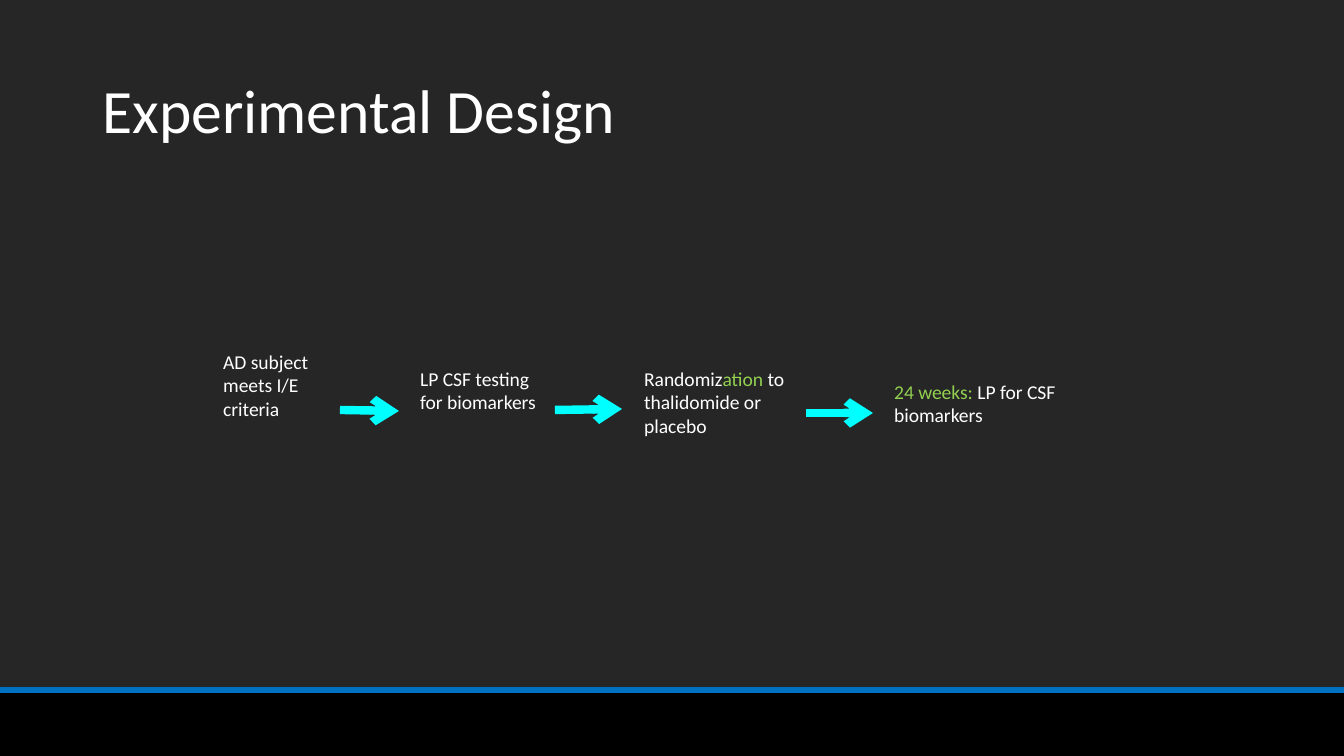
"""Build the Experimental Design slide: four study steps joined by arrows."""
from dataclasses import dataclass

from lxml import etree
from pptx import Presentation, util as u
from pptx.dml.color import RGBColor
from pptx.enum import shapes, text
from pptx.oxml import ns

EMU_PER_PX = 914400 / 134.4
WIDTH, HEIGHT, BAND_TOP = 1344, 756, 690
FONT = "Calibri"

BACKGROUND = RGBColor(0x26, 0x26, 0x26)
BLACK = RGBColor(0x00, 0x00, 0x00)
BLUE = RGBColor(0x00, 0x70, 0xC0)
CYAN = RGBColor(0x00, 0xFF, 0xFF)
GREEN = RGBColor(0x92, 0xD0, 0x50)
WHITE = RGBColor(0xFF, 0xFF, 0xFF)


@dataclass(frozen=True)
class Run:
    text: str
    color: RGBColor = WHITE


@dataclass(frozen=True)
class Label:
    left: int
    top: int
    width: int
    height: int
    runs: tuple[Run, ...]
    size: float = 10.5


@dataclass(frozen=True)
class Line:
    start: tuple[int, int]
    end: tuple[int, int]
    color: RGBColor = CYAN
    weight: float = 4.5
    arrow: bool = True


TITLE = Label(93, 40, 1158, 147, (Run("Experimental Design"),), 33)
TITLE_FORMAT = {
    "vertical_anchor": text.MSO_ANCHOR.MIDDLE,
    "margin_left": u.Inches(0.07),
    "margin_right": u.Inches(0.07),
    "margin_top": u.Inches(0.04),
    "margin_bottom": u.Inches(0.04),
}
STEPS = (
    Label(210, 343, 126, 85, (Run("AD subject meets I/E criteria"),)),
    Label(407, 360, 151, 60, (Run("LP CSF testing for biomarkers"),)),
    Label(631, 360, 180, 85, (
        Run("Randomiz"),
        Run("ation", GREEN),
        Run(" to thalidomide or placebo"),
    )),
    Label(881, 373, 227, 60, (
        Run("24 weeks:", GREEN),
        Run(" LP for CSF biomarkers"),
    )),
)
BAND_EDGE = Line((0, BAND_TOP), (WIDTH, BAND_TOP), BLUE, 3, False)
ARROWS = (
    Line((340, 410), (399, 411)),
    Line((555, 410), (622, 409)),
    Line((806, 413), (873, 413)),
)


def px(*lengths: int) -> list[u.Emu]:
    """Turn pixel lengths into EMU."""
    return [u.Emu(round(length * EMU_PER_PX)) for length in lengths]


def set_format(target: object, values: dict) -> None:
    """Set every attribute named in a dict of format values."""
    for name, value in values.items():
        setattr(target, name, value)


def add_label(slide, label: Label, frame_format: dict, line_spacing: float = 1.0) -> None:
    """Add a wrapped text box with one paragraph of coloured runs."""
    box = slide.shapes.add_textbox(*px(label.left, label.top, label.width, label.height))
    set_format(box.text_frame, {"word_wrap": True, **frame_format})
    paragraph = box.text_frame.paragraphs[0]
    paragraph.line_spacing = line_spacing
    for part in label.runs:
        run = paragraph.add_run()
        run.text = part.text
        set_format(run.font, {"name": FONT, "size": u.Pt(label.size)})
        run.font.color.rgb = part.color


def add_line(slide, line: Line) -> None:
    """Add a straight line without shadow, with an arrowhead if wanted."""
    connector = slide.shapes.add_connector(
        shapes.MSO_CONNECTOR.STRAIGHT, *px(*line.start, *line.end)
    )
    connector.line.color.rgb = line.color
    connector.line.width = u.Pt(line.weight)
    if line.arrow:
        outline = connector.line._get_or_add_ln()
        etree.SubElement(outline, ns.qn("a:tailEnd"), type="arrow")
    etree.SubElement(connector._element.spPr, ns.qn("a:effectLst"))


def add_band(slide) -> None:
    """Add the black footer band and its blue edge."""
    band = slide.shapes.add_shape(
        shapes.MSO_SHAPE.RECTANGLE, *px(0, BAND_TOP, WIDTH, HEIGHT - BAND_TOP)
    )
    band.shadow.inherit = False
    band.fill.solid()
    band.fill.fore_color.rgb = BLACK
    band.line.fill.background()
    add_line(slide, BAND_EDGE)


def main() -> None:
    """Draw the slide and save it."""
    presentation = Presentation()
    presentation.slide_width, presentation.slide_height = px(WIDTH, HEIGHT)
    slide = presentation.slides.add_slide(presentation.slide_layouts[6])
    slide.background.fill.solid()
    slide.background.fill.fore_color.rgb = BACKGROUND
    add_band(slide)
    add_label(slide, TITLE, TITLE_FORMAT, 0.9)
    for step in STEPS:
        add_label(slide, step, {"auto_size": text.MSO_AUTO_SIZE.SHAPE_TO_FIT_TEXT})
    for arrow in ARROWS:
        add_line(slide, arrow)
    presentation.save("out.pptx")


if __name__ == "__main__":
    main()
